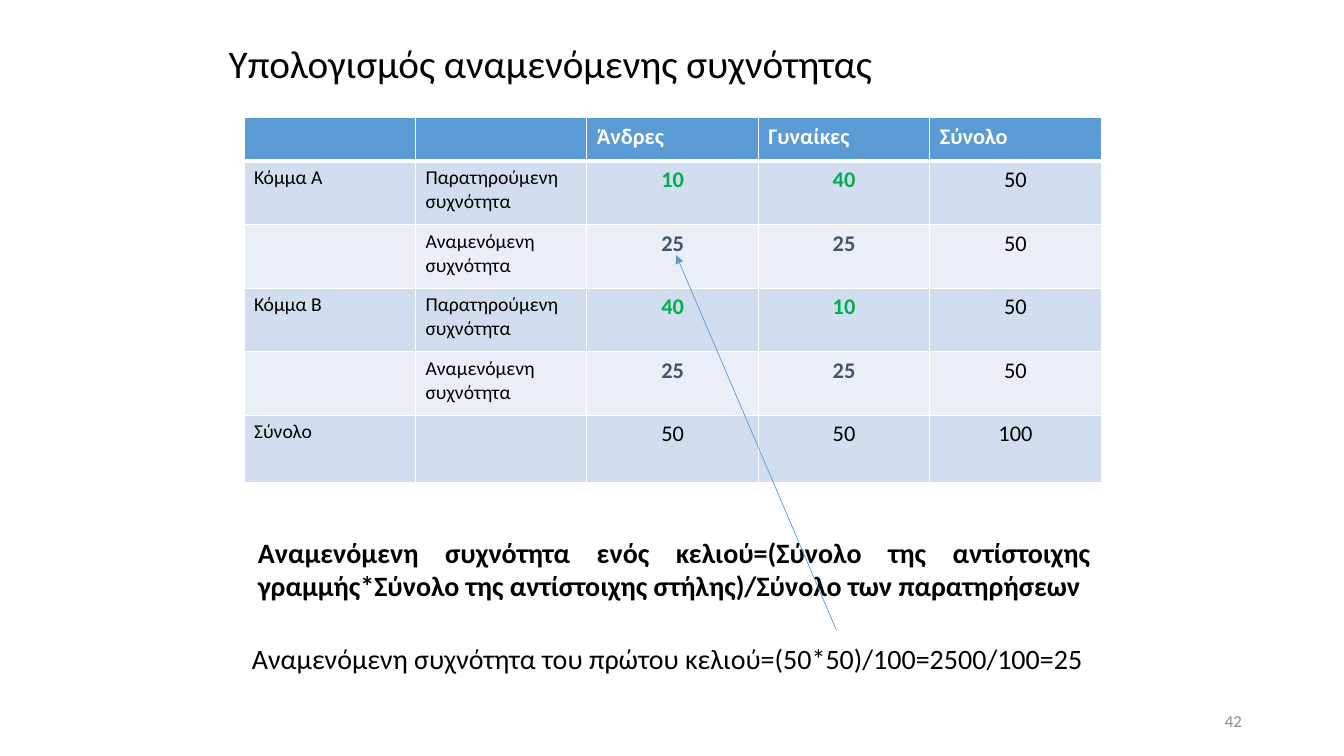
from dataclasses import dataclass

from lxml.etree import SubElement
from pptx import Presentation
from pptx.dml.color import RGBColor
from pptx.enum.shapes import MSO_CONNECTOR as Connector
from pptx.enum.text import MSO_ANCHOR as Anchor, PP_ALIGN as Align
from pptx.oxml.ns import qn
from pptx.util import Cm, Pt


@dataclass(frozen=True)
class Theme:
    font: str = "Calibri"
    black: str = "000000"
    white: str = "FFFFFF"
    grey: str = "8C8C8C"
    accent: str = "5B9BD5"
    band_dark: str = "D2DEEF"
    band_light: str = "EAEFF7"
    observed: str = "00B050"
    expected: str = "44546A"
    title: int = 28
    body: int = 20
    figure: int = 16
    label: int = 14
    number: int = 12


THEME = Theme()
OBSERVED = "Παρατηρούμενη συχνότητα"
EXPECTED = "Αναμενόμενη συχνότητα"
ROWS = [
    ("", "", "Άνδρες", "Γυναίκες", "Σύνολο"),
    ("Κόμμα Α", OBSERVED, "10", "40", "50"),
    ("", EXPECTED, "25", "25", "50"),
    ("Κόμμα Β", OBSERVED, "40", "10", "50"),
    ("", EXPECTED, "25", "25", "50"),
    ("Σύνολο", "", "50", "50", "100"),
]
ROW_HEIGHTS = [1.09, 1.6, 1.6, 1.6, 1.6, 1.7]
COLUMN_WIDTH = 4.32
FORMULA = ("Αναμενόμενη συχνότητα ενός κελιού=(Σύνολο της αντίστοιχης γραμμής"
           "*Σύνολο της αντίστοιχης στήλης)/Σύνολο των παρατηρήσεων")
EXAMPLE = "Αναμενόμενη συχνότητα του πρώτου κελιού=(50*50)/100=2500/100=25"


def write(frame, text, size, color=THEME.black, bold=False, align=Align.LEFT):
    paragraph = frame.paragraphs[0]
    paragraph.alignment = align
    run = paragraph.add_run()
    run.text = text
    formats = {"name": THEME.font, "size": Pt(size), "bold": bold}
    for name, value in formats.items():
        setattr(run.font, name, value)
    run.font.color.rgb = RGBColor.from_string(color)
    return paragraph


def add_title(slide, text, left, top, width, height):
    title = slide.shapes.title
    box = {"left": left, "top": top, "width": width, "height": height}
    for name, value in box.items():
        setattr(title, name, Cm(value))
    title.text_frame.vertical_anchor = Anchor.MIDDLE
    write(title.text_frame, text, THEME.title).line_spacing = 0.9


def add_text(slide, text, left, top, width, height, size, anchor=Anchor.TOP, **style):
    box = slide.shapes.add_textbox(Cm(left), Cm(top), Cm(width), Cm(height))
    box.text_frame.word_wrap = True
    box.text_frame.vertical_anchor = anchor
    write(box.text_frame, text, size, **style)


def cell_style(row, column):
    """Text format that follows from a cell's place in the table."""
    if row == 0:
        return {"size": THEME.figure, "color": THEME.white, "bold": True}
    if column < 2:
        return {"size": THEME.label}
    style = {"size": THEME.figure, "align": Align.CENTER}
    if column < 4 and row < len(ROWS) - 1:
        style["color"] = THEME.observed if row % 2 else THEME.expected
        style["bold"] = True
    return style


def set_borders(cell, row):
    properties = cell._tc.get_or_add_tcPr()
    widths = {"lnL": 1, "lnR": 1, "lnT": 3 if row == 1 else 1, "lnB": 1 if row else 3}
    for side, width in widths.items():
        line = SubElement(properties, qn(f"a:{side}"), w=str(Pt(width)))
        fill = SubElement(line, qn("a:solidFill"))
        SubElement(fill, qn("a:srgbClr"), val=THEME.white)


def add_frequency_table(slide, left, top):
    columns = len(ROWS[0])
    table = slide.shapes.add_table(
        len(ROWS), columns, Cm(left), Cm(top),
        Cm(COLUMN_WIDTH * columns), Cm(sum(ROW_HEIGHTS))).table
    for column in table.columns:
        column.width = Cm(COLUMN_WIDTH)
    for row, texts in enumerate(ROWS):
        table.rows[row].height = Cm(ROW_HEIGHTS[row])
        band = THEME.band_dark if row % 2 else THEME.band_light
        for column, text in enumerate(texts):
            cell = table.cell(row, column)
            set_borders(cell, row)
            cell.fill.solid()
            cell.fill.fore_color.rgb = RGBColor.from_string(band if row else THEME.accent)
            if text:
                write(cell.text_frame, text, **cell_style(row, column))


def add_arrow(slide, start, end):
    points = [Cm(value) for value in (*start, *end)]
    arrow = slide.shapes.add_connector(Connector.STRAIGHT, *points)
    arrow.line.width = Pt(0.5)
    arrow.line.color.rgb = RGBColor.from_string(THEME.accent)
    SubElement(arrow.line._get_or_add_ln(), qn("a:tailEnd"), type="triangle")
    SubElement(arrow._element.spPr, qn("a:effectLst"))


def main():
    presentation = Presentation()
    presentation.slide_width = Cm(33.87)
    presentation.slide_height = Cm(19.05)
    title_only = presentation.slide_layouts[5]
    slide = presentation.slides.add_slide(title_only)

    # Title and slide number
    add_title(slide, "Υπολογισμός αναμενόμενης συχνότητας", 5.51, 0.76, 22.86, 1.78)
    add_text(slide, "42", 23.93, 17.65, 7.62, 1.02, THEME.number,
             Anchor.MIDDLE, color=THEME.grey, align=Align.RIGHT)

    # Observed and expected frequencies
    add_frequency_table(slide, 6.15, 2.97)

    # Formula, worked example and the cell it explains
    add_text(slide, FORMULA, 6.25, 13.36, 21.49, 1.96, THEME.body,
             bold=True, align=Align.JUSTIFY)
    add_text(slide, EXAMPLE, 6.1, 16.03, 21.49, 1.12, THEME.body)
    add_arrow(slide, (21.08, 15.88), (17.04, 6.43))

    presentation.save("out.pptx")


if __name__ == "__main__":
    main()
